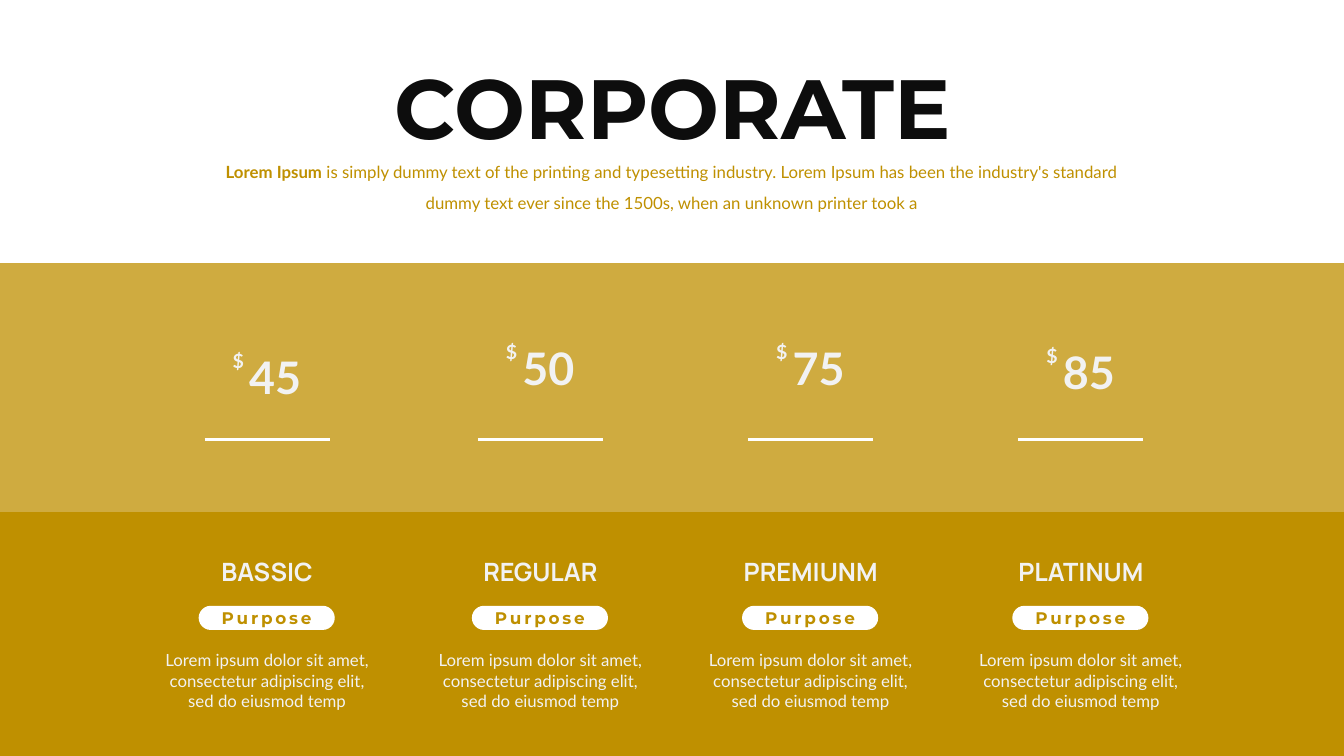
import dataclasses

import lxml.etree
import pptx
import pptx.dml.color
import pptx.enum.shapes
import pptx.enum.text
import pptx.oxml.ns
import pptx.util

Inches = pptx.util.Inches
Shapes = pptx.enum.shapes.MSO_SHAPE
Align = pptx.enum.text.PP_ALIGN

TITLE = "CORPORATE"
INTRO_LEAD = "Lorem Ipsum"
INTRO_REST = (
    " is simply dummy text of the printing and typesetting industry. "
    "Lorem Ipsum has been the industry's standard dummy text ever since "
    "the 1500s, when an unknown printer took a"
)
CURRENCY = "$"
BUTTON = "Purpose"
DETAILS = "Lorem ipsum dolor sit amet, consectetur adipiscing elit, sed do eiusmod temp"
PLANS = [
    {"name": "BASSIC", "price": "45", "center": 2.65, "price_top": 3.42},
    {"name": "REGULAR", "price": "50", "center": 5.36, "price_top": 3.33},
    {"name": "PREMIUNM", "price": "75", "center": 8.04, "price_top": 3.33},
    {"name": "PLATINUM", "price": "85", "center": 10.72, "price_top": 3.37},
]


@dataclasses.dataclass(frozen=True)
class Theme:
    """Colours, fonts and type sizes of the slide."""

    gold: str = "BF9000"
    white: str = "FFFFFF"
    pale: str = "F2F2F2"
    ink: str = "0D0D0D"
    body_font: str = "Lato"
    plan_font: str = "Manrope"
    title_font: str = "Montserrat"
    title_size: int = 60
    price_size: int = 32
    plan_size: int = 18
    currency_size: int = 14
    body_size: int = 12


THEME = Theme()


def color(value):
    """Turn a hex string into a colour."""
    return pptx.dml.color.RGBColor.from_string(value)


def add_span(para, text, size, font, tint, bold=False, tracking=None):
    """Add one formatted run to a paragraph."""
    span = para.add_run()
    span.text = text
    span.font.size = pptx.util.Pt(size)
    span.font.name = font
    span.font.bold = bold
    span.font.color.rgb = color(tint)
    if tracking:
        span._r.get_or_add_rPr().set("spc", str(tracking * 100))


def place(box, left, top, width, height):
    """Set the position and size of a box."""
    box.left, box.top = Inches(left), Inches(top)
    box.width, box.height = Inches(width), Inches(height)


def frame_text(box, wrap=True, align=Align.CENTER):
    """Prepare the text frame of a box and return its first paragraph."""
    frame = box.text_frame
    frame.word_wrap = wrap
    frame.auto_size = pptx.enum.text.MSO_AUTO_SIZE.SHAPE_TO_FIT_TEXT
    frame.vertical_anchor = pptx.enum.text.MSO_ANCHOR.TOP
    para = frame.paragraphs[0]
    para.alignment = align
    return para


def add_text(page, left, top, width, height, wrap=True, align=Align.CENTER):
    """Add a text box and return its first paragraph."""
    box = page.shapes.add_textbox(*map(Inches, (left, top, width, height)))
    return frame_text(box, wrap, align)


def add_block(page, kind, left, top, width, height, tint, opacity=None):
    """Add a filled shape without an outline."""
    block = page.shapes.add_shape(kind, *map(Inches, (left, top, width, height)))
    block.shadow.inherit = False
    block.fill.solid()
    block.fill.fore_color.rgb = color(tint)
    block.line.fill.background()
    if opacity:
        name = pptx.oxml.ns.qn("a:srgbClr")
        swatch = next(block._element.spPr.iter(name))
        alpha = lxml.etree.SubElement(swatch, pptx.oxml.ns.qn("a:alpha"))
        alpha.set("val", str(opacity * 1000))
    return block


def add_rule(page, center, top, width):
    """Add a horizontal white rule centred on a column."""
    ends = (center - width / 2, top, center + width / 2, top)
    rule = page.shapes.add_connector(
        pptx.enum.shapes.MSO_CONNECTOR.STRAIGHT, *map(Inches, ends)
    )
    rule.line.color.rgb = color(THEME.white)
    rule.line.width = pptx.util.Pt(1.5)
    lxml.etree.SubElement(rule._element.spPr, pptx.oxml.ns.qn("a:effectLst"))


def add_header(page):
    """Fill in the title and the introduction."""
    title = page.shapes.title
    place(title, 3.76, 0.5, 5.82, 1.11)
    para = frame_text(title, wrap=False)
    para.line_spacing = 1.0
    add_span(para, TITLE, THEME.title_size, THEME.title_font, THEME.ink, True)
    intro = add_text(page, 2.08, 1.46, 9.17, 0.67)
    intro.line_spacing = 1.5
    style = (THEME.body_size, THEME.body_font, THEME.gold)
    add_span(intro, INTRO_LEAD, *style, bold=True)
    add_span(intro, INTRO_REST, *style)


def add_plan(page, name, price, center, price_top):
    """Add one pricing column."""
    para = add_text(page, center - 0.28, price_top, 0.72, 0.64, wrap=False)
    add_span(para, price, THEME.price_size, THEME.body_font, THEME.pale, True)
    para = add_text(page, center - 0.44, price_top - 0.01, 0.31, 0.34, False, Align.LEFT)
    add_span(para, CURRENCY, THEME.currency_size, THEME.body_font, THEME.pale, True)
    add_rule(page, center, 4.36, 1.24)

    para = add_text(page, center - 0.9, 5.47, 1.8, 0.4, wrap=False)
    add_span(para, name, THEME.plan_size, THEME.plan_font, THEME.pale, True)
    pill = add_block(
        page, Shapes.ROUNDED_RECTANGLE, center - 0.68, 6.01, 1.35, 0.24, THEME.white
    )
    pill.adjustments[0] = 0.5
    para = add_text(page, center - 0.58, 5.98, 1.15, 0.3)
    add_span(para, BUTTON, THEME.body_size, THEME.title_font, THEME.gold, True, 2)
    para = add_text(page, center - 1.17, 6.4, 2.34, 0.71)
    add_span(para, DETAILS, THEME.body_size, THEME.body_font, THEME.pale)


def main():
    """Build the pricing slide and save it."""
    deck = pptx.Presentation()
    deck.slide_width, deck.slide_height = Inches(13.33), Inches(7.5)
    page = deck.slides.add_slide(deck.slide_layouts[5])
    add_block(page, Shapes.RECTANGLE, 0, 2.61, 13.33, 2.47, THEME.gold, 75)
    add_block(page, Shapes.RECTANGLE, 0, 5.08, 13.33, 2.42, THEME.gold)
    add_header(page)
    for plan in PLANS:
        add_plan(page, **plan)
    deck.save("out.pptx")


if __name__ == "__main__":
    main()
